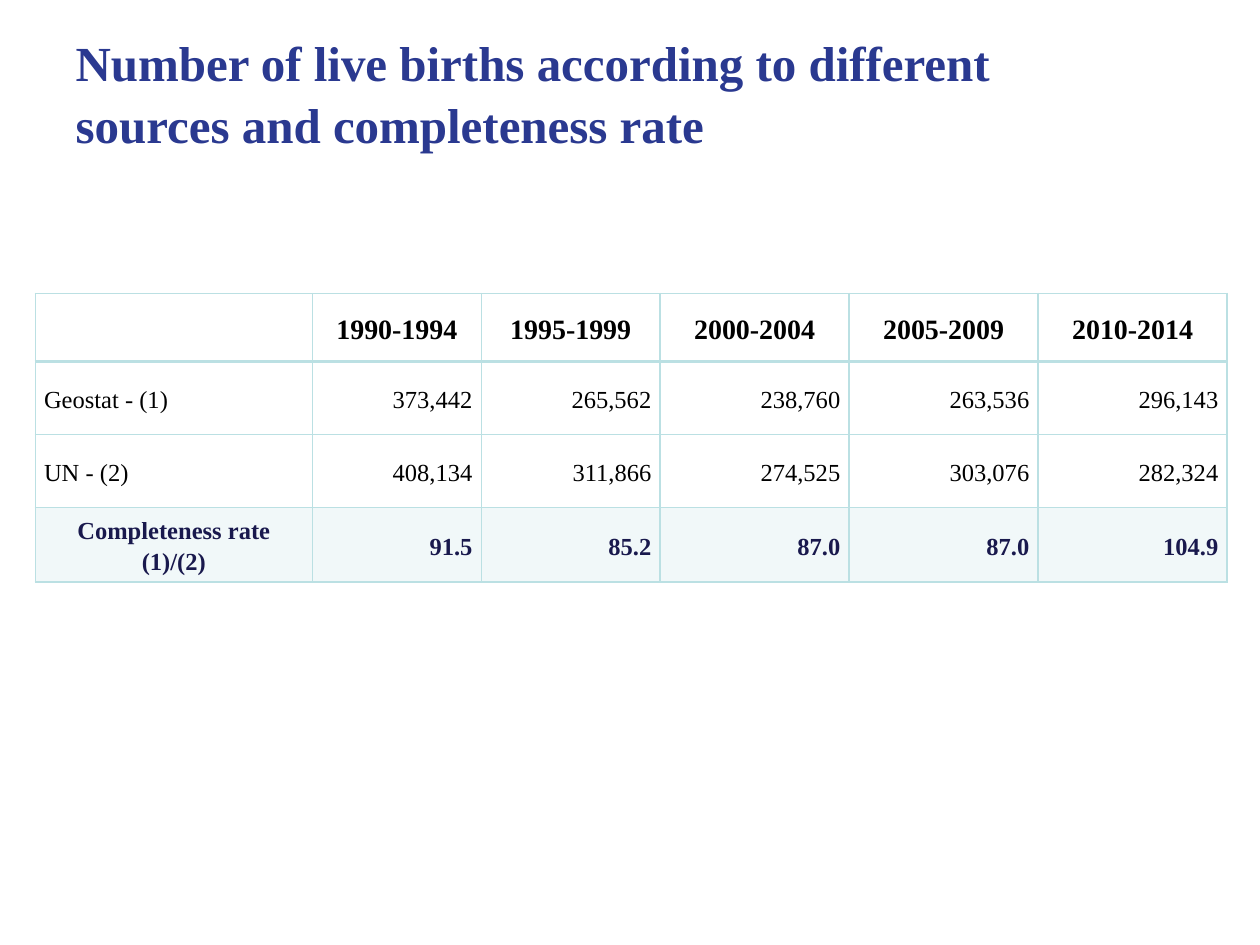
from lxml import etree
from pptx import Presentation
from pptx.dml.color import RGBColor
from pptx.enum import text
from pptx.oxml.ns import qn
from pptx.util import Inches, Pt

COLORS = {"title": "2A3990", "body": "000000", "rate": "19194D",
          "border": "BBE0E3", "rate_fill": "BBE0E3"}
FONT = "Times New Roman"
TITLE = "Number of live births according to different sources and completeness rate"
ROWS = [
    ["", "1990-1994", "1995-1999", "2000-2004", "2005-2009", "2010-2014"],
    ["Geostat - (1)", "373,442", "265,562", "238,760", "263,536", "296,143"],
    ["UN - (2)", "408,134", "311,866", "274,525", "303,076", "282,324"],
    ["Completeness rate (1)/(2)", "91.5", "85.2", "87.0", "87.0", "104.9"],
]
COLUMN_WIDTHS = [2.2, 1.34, 1.42, 1.5, 1.5, 1.5]
ROW_HEIGHTS = [0.54, 0.58, 0.58, 0.59]
HEADER, RATE = 0, len(ROWS) - 1


def set_font(paragraph, size, color, bold):
    font = paragraph.font
    font.name, font.size, font.bold = FONT, Pt(size), bold
    font.color.rgb = RGBColor.from_string(COLORS[color])


def add_borders(cell, widths):
    """Draw the cell's sides; widths maps L, R, T and B to points."""
    properties = cell._tc.get_or_add_tcPr()
    for position, (side, width) in enumerate(widths.items()):
        line = etree.Element(qn(f"a:ln{side}"), w=str(Pt(width)))
        fill = etree.SubElement(line, qn("a:solidFill"))
        etree.SubElement(fill, qn("a:srgbClr"), val=COLORS["border"])
        properties.insert(position, line)


def fill_cell(cell, row):
    if row != RATE:
        cell.fill.background()
        return
    cell.fill.solid()
    cell.fill.fore_color.rgb = RGBColor.from_string(COLORS["rate_fill"])
    color = cell._tc.tcPr.find(f".//{qn('a:srgbClr')}")
    etree.SubElement(color, qn("a:alpha"), val="20000")


def alignment(row, column):
    if row == HEADER or (row == RATE and column == 0):
        return text.PP_ALIGN.CENTER
    return text.PP_ALIGN.LEFT if column == 0 else text.PP_ALIGN.RIGHT


def format_cell(cell, row, column):
    cell.text = ROWS[row][column]
    cell.vertical_anchor = text.MSO_ANCHOR.MIDDLE
    cell.margin_left = cell.margin_right = Inches(0.07)
    cell.margin_top = cell.margin_bottom = 0
    paragraph = cell.text_frame.paragraphs[0]
    paragraph.alignment = alignment(row, column)
    paragraph.line_spacing = 1.15
    set_font(paragraph, 16 if row == HEADER else 14,
             "rate" if row == RATE else "body", row in (HEADER, RATE))
    fill_cell(cell, row)
    add_borders(cell, {"L": 1, "R": 1, "T": 2 if row == HEADER + 1 else 1,
                       "B": 2 if row == HEADER else 1})


def add_title(slide):
    title = slide.shapes.title
    title.left, title.top = Inches(0.5), Inches(0.3)
    title.width, title.height = Inches(8.14), Inches(0.85)
    frame = title.text_frame
    frame.text = TITLE
    frame.word_wrap = True
    frame.auto_size = text.MSO_AUTO_SIZE.NONE
    frame.vertical_anchor = text.MSO_ANCHOR.MIDDLE
    paragraph = frame.paragraphs[0]
    paragraph.alignment = text.PP_ALIGN.LEFT
    paragraph.line_spacing = 1.05
    set_font(paragraph, 28, "title", True)


def add_births_table(slide):
    births = slide.shapes.add_table(
        len(ROWS), len(COLUMN_WIDTHS), Inches(0.28), Inches(2.33),
        Inches(sum(COLUMN_WIDTHS)), Inches(sum(ROW_HEIGHTS))).table
    births.horz_banding = False
    for column, width in zip(births.columns, COLUMN_WIDTHS):
        column.width = Inches(width)
    for row, height in enumerate(ROW_HEIGHTS):
        births.rows[row].height = Inches(height)
        for column in range(len(COLUMN_WIDTHS)):
            format_cell(births.cell(row, column), row, column)


def main():
    deck = Presentation()
    deck.slide_width, deck.slide_height = Inches(10), Inches(7.5)
    slide = deck.slides.add_slide(deck.slide_layouts[5])
    add_title(slide)
    add_births_table(slide)
    deck.save("out.pptx")


if __name__ == "__main__":
    main()
